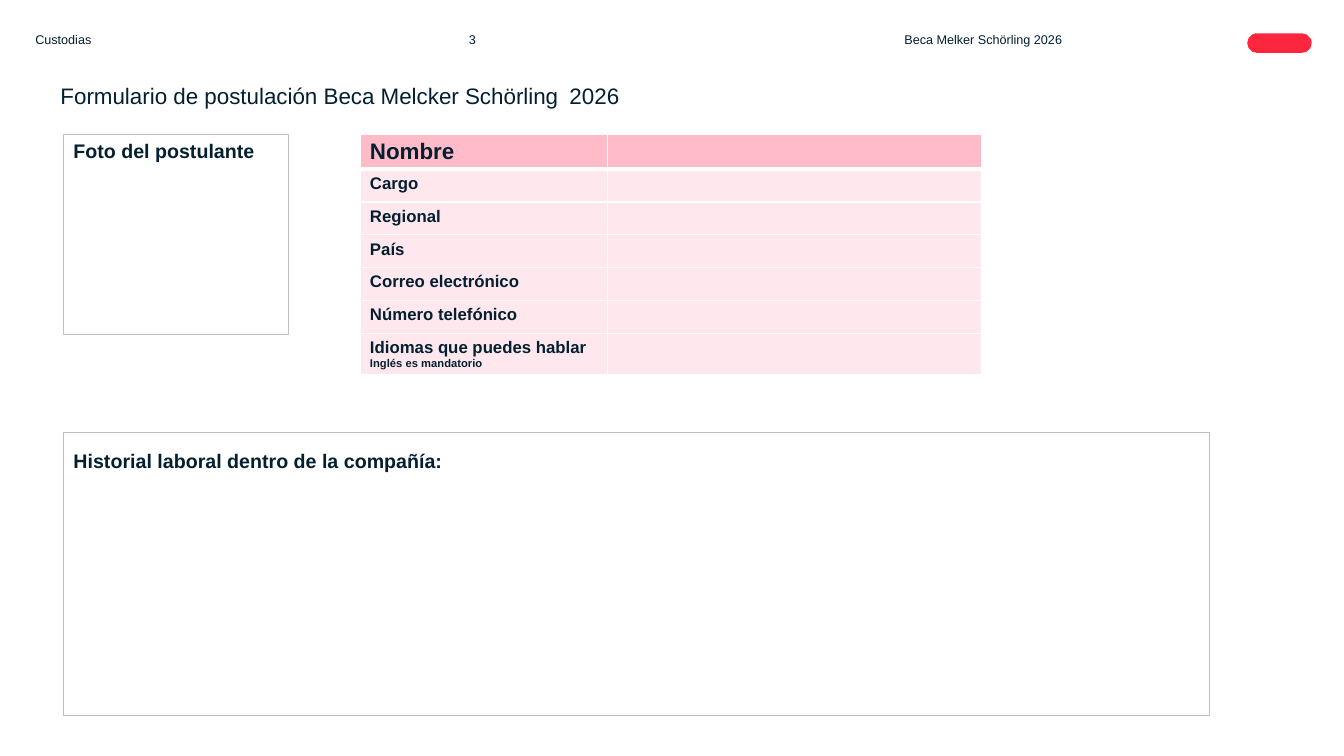
from dataclasses import dataclass

from pptx import Presentation
from pptx.dml.color import RGBColor
from pptx.enum.shapes import MSO_SHAPE
from pptx.enum.text import MSO_ANCHOR, MSO_AUTO_SIZE, PP_ALIGN
from pptx.oxml import parse_xml
from pptx.oxml.ns import nsdecls
from pptx.shapes.autoshape import Shape
from pptx.slide import Slide
from pptx.table import _Cell as Cell
from pptx.text.text import TextFrame, _Paragraph as Para
from pptx.util import Emu, Inches, Pt

WIDE, HIGH = Inches(13.33), Inches(7.5)


@dataclass(frozen=True)
class Theme:
    """Colours, font and type sizes of the form."""

    font: str = "Arial"
    ink: str = "031F30"
    red: str = "FC273F"
    head: str = "FFBBC8"
    body: str = "FFE8ED"
    edge: str = "BFBFBF"
    rule: str = "FFFFFF"
    title: int = 16
    label: int = 14
    cell: int = 12
    small: int = 9
    hint: int = 8


@dataclass(frozen=True)
class Area:
    """A rectangle in percent of the slide's width and height."""

    left: float
    top: float
    width: float
    height: float

    def box(self) -> tuple[Emu, Emu, Emu, Emu]:
        """Return left, top, width and height as lengths."""
        return across(self.left), down(self.top), across(self.width), down(self.height)


@dataclass(frozen=True)
class Note:
    """A small line of text at the top of the slide."""

    text: str
    area: Area


@dataclass(frozen=True)
class Panel:
    """A framed area to be filled in, with its heading."""

    text: str
    area: Area
    space: float = 1.0


@dataclass(frozen=True)
class Field:
    """A table row: its label, height in percent, and hint."""

    text: str
    height: float = 4.35
    hint: str = ""


THEME = Theme()
NOTES = (
    Note("Custodias", Area(2.63, 4.27, 18.9, 8.4)),
    Note("3", Area(34.88, 4.27, 6, 8.4)),
    Note("Beca Melker Schörling 2026", Area(67.29, 4.27, 22.06, 8.4)),
)
PANELS = (
    Panel("Foto del postulante", Area(4.73, 17.73, 16.73, 26.53)),
    Panel("Historial laboral dentro de la compañía:", Area(4.73, 57.2, 85.3, 37.47), 1.5),
)
FIELDS = (
    Field("Nombre", 4.63),
    Field("Cargo"),
    Field("Regional"),
    Field("País"),
    Field("Correo electrónico"),
    Field("Número telefónico"),
    Field("Idiomas que puedes hablar", 5.47, "Inglés es mandatorio"),
)
COLS = (18.45, 27.83)
TITLE = Area(4.5, 11.2, 45.46, 8.8)
BADGE = Area(92.8, 4.4, 4.8, 2.6)


def across(share: float) -> Emu:
    """Turn a percentage of the width into a length."""
    return Emu(round(WIDE * share / 100))


def down(share: float) -> Emu:
    """Turn a percentage of the height into a length."""
    return Emu(round(HIGH * share / 100))


def style(para: Para, size: int, bold: bool = False) -> None:
    """Set the font of a whole paragraph."""
    para.alignment = PP_ALIGN.LEFT
    font = para.font
    font.name, font.size, font.bold = THEME.font, Pt(size), bold
    font.color.rgb = RGBColor.from_string(THEME.ink)


def frame(text: TextFrame, inset: bool = False) -> None:
    """Wrap text from the top of its box, with or without insets."""
    text.word_wrap = True
    text.auto_size = MSO_AUTO_SIZE.NONE
    text.vertical_anchor = MSO_ANCHOR.TOP
    if not inset:
        text.margin_left = text.margin_right = text.margin_top = text.margin_bottom = 0


def add_title(slide: Slide) -> None:
    """Place and write the title."""
    title = slide.shapes.title
    title.left, title.top, title.width, title.height = TITLE.box()
    frame(title.text_frame)
    para = title.text_frame.paragraphs[0]
    para.line_spacing = 0.9
    style(para, THEME.title)
    para.add_run().text = "Formulario de postulación Beca Melcker Schörling"
    gap = para.add_run()
    gap.text, gap.font.size = " ", Pt(THEME.cell)
    para.add_run().text = " 2026"


def add_note(slide: Slide, note: Note) -> None:
    """Write one of the small lines at the top."""
    text = slide.shapes.add_textbox(*note.area.box()).text_frame
    frame(text)
    text.text = note.text
    style(text.paragraphs[0], THEME.small)


def add_plain(slide: Slide, kind: MSO_SHAPE, area: Area) -> Shape:
    """Add a preset shape without a shadow."""
    shape = slide.shapes.add_shape(kind, *area.box())
    shape.shadow.inherit = False
    return shape


def add_panel(slide: Slide, panel: Panel) -> None:
    """Draw a framed area with its heading."""
    shape = add_plain(slide, MSO_SHAPE.RECTANGLE, panel.area)
    shape.fill.background()
    shape.line.color.rgb = RGBColor.from_string(THEME.edge)
    shape.line.width = Pt(0.75)
    text = shape.text_frame
    frame(text, inset=True)
    text.text = panel.text
    para = text.paragraphs[0]
    para.line_spacing = panel.space
    style(para, THEME.label, bold=True)


def add_badge(slide: Slide) -> None:
    """Draw the red mark in the corner."""
    shape = add_plain(slide, MSO_SHAPE.ROUNDED_RECTANGLE, BADGE)
    shape.adjustments[0] = 0.5
    shape.fill.solid()
    shape.fill.fore_color.rgb = RGBColor.from_string(THEME.red)
    shape.line.fill.background()


def paint(cell: Cell, row: int) -> None:
    """Give a cell its white borders and its fill."""
    widths = {"L": 1, "R": 1, "T": 3 if row == 1 else 1, "B": 1 if row else 3}
    props = cell._tc.get_or_add_tcPr()
    for side, width in widths.items():
        props.append(parse_xml(
            f'<a:ln{side} {nsdecls("a")} w="{Pt(width)}"><a:solidFill>'
            f'<a:srgbClr val="{THEME.rule}"/></a:solidFill></a:ln{side}>'))
    cell.fill.solid()
    cell.fill.fore_color.rgb = RGBColor.from_string(THEME.body if row else THEME.head)


def add_table(slide: Slide) -> None:
    """Draw the table of personal data."""
    area = Area(26.78, 17.73, sum(COLS), sum(field.height for field in FIELDS))
    table = slide.shapes.add_table(len(FIELDS), len(COLS), *area.box()).table
    table.first_row = table.horz_banding = False
    for col, share in zip(table.columns, COLS):
        col.width = across(share)
    for row, field in enumerate(FIELDS):
        table.rows[row].height = down(field.height)
        size = THEME.cell if row else THEME.title
        name, blank = table.cell(row, 0), table.cell(row, 1)
        for cell in (name, blank):
            paint(cell, row)
            style(cell.text_frame.paragraphs[0], size, bold=True)
        name.text_frame.paragraphs[0].add_run().text = field.text
        blank.text_frame.paragraphs[0]._p.append(
            parse_xml(f'<a:endParaRPr {nsdecls("a")} sz="{size * 100}"/>'))
        if field.hint:
            hint = name.text_frame.add_paragraph()
            hint.text = field.hint
            style(hint, THEME.hint, bold=True)


def main() -> None:
    """Build and save the form."""
    deck = Presentation()
    deck.slide_width, deck.slide_height = WIDE, HIGH
    slide = deck.slides.add_slide(deck.slide_layouts[5])
    add_badge(slide)
    add_title(slide)
    add_table(slide)
    for panel in PANELS:
        add_panel(slide, panel)
    for note in NOTES:
        add_note(slide, note)
    deck.save("out.pptx")


if __name__ == "__main__":
    main()
